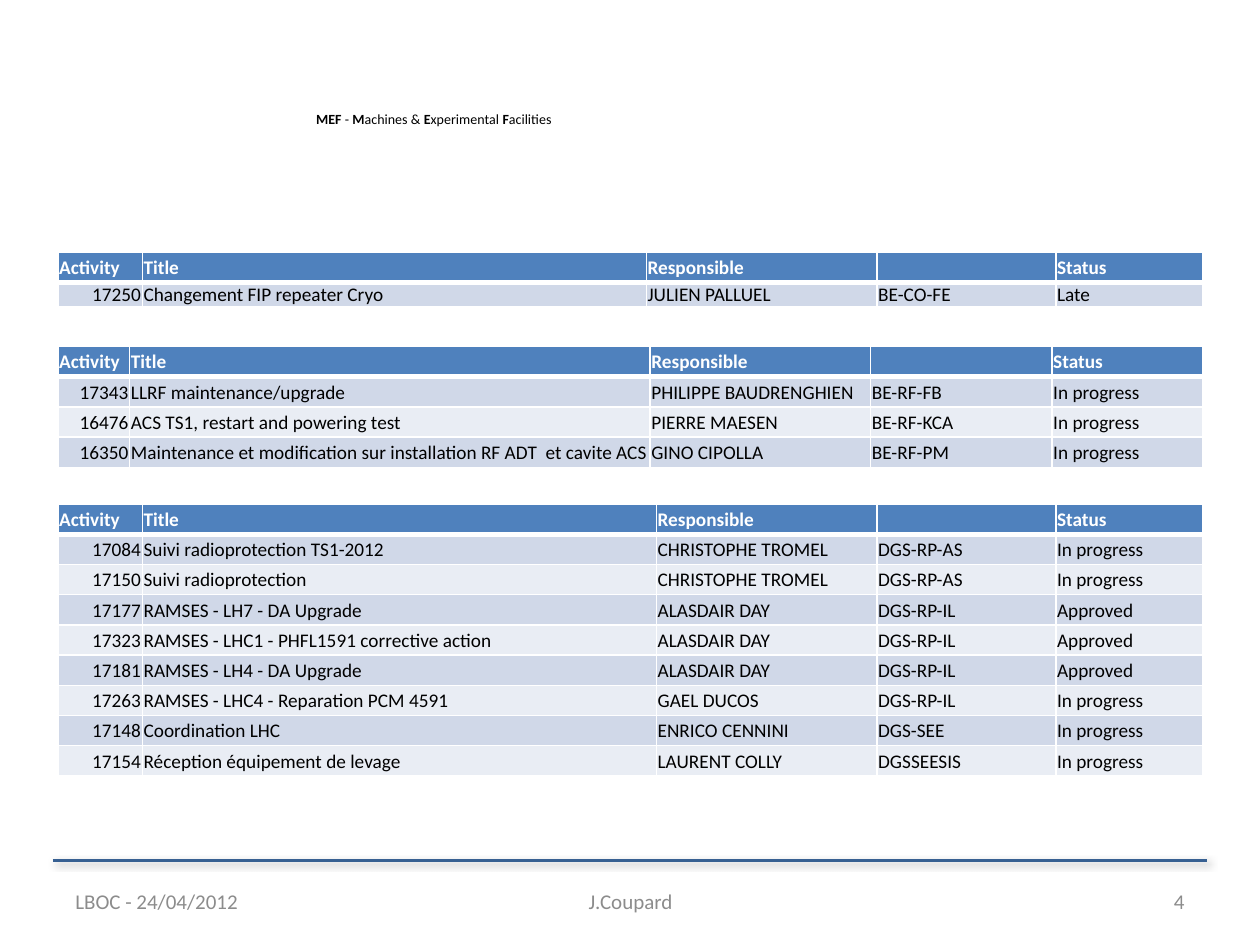
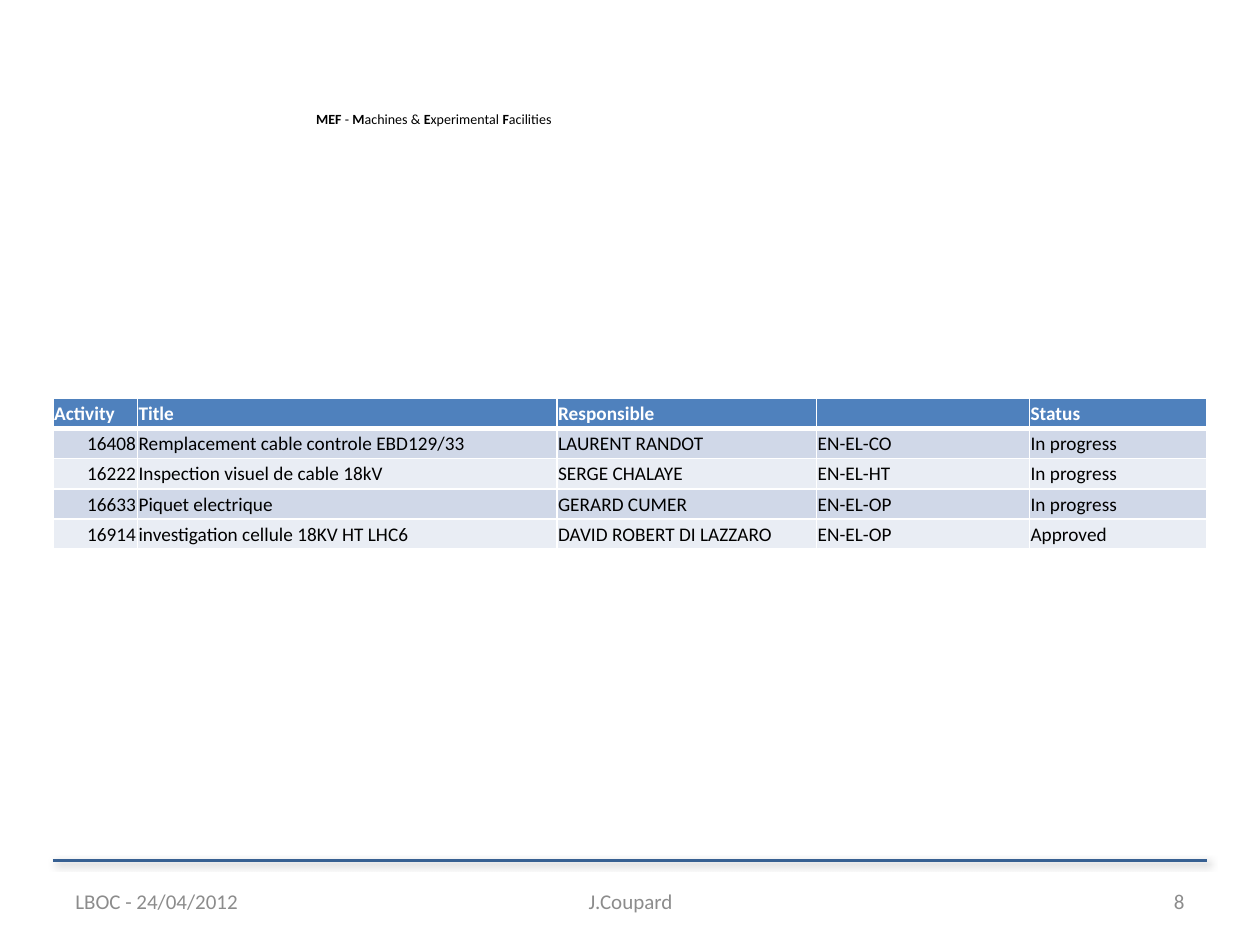
"""Build two slides of activity tables with a shared header and footer."""
import pptx
import pptx.util
import pptx.dml.color
import pptx.enum.shapes
import pptx.enum.text
import pptx.oxml
import pptx.oxml.ns
from lxml import etree

COLORS = {"head": "4F81BD", "odd": "D0D8E8", "even": "E9EDF4", "rule": "376092",
          "foot": "8C8C8C", "ink": "000000", "white": "FFFFFF"}
FONT = "Calibri"
HEADS = ("Activity", "Title", "Responsible", "", "Status")
BANNER = (("MEF ", True), ("- ", False), ("M", True), ("achines & ", False),
          ("E", True), ("xperimental ", False), ("F", True), ("acilities", False))
ROW = 0.24

SLIDES = [
    {"page": "4", "tables": [
        {"at": (0.46, 2), "cols": (0.67, 4, 1.83, 1.42, 1.17), "row": 0.17, "rows": [
            ("17250", "Changement FIP repeater Cryo", "JULIEN PALLUEL", "BE-CO-FE", "Late"),
        ]},
        {"at": (0.46, 2.75), "cols": (0.57, 4.13, 1.75, 1.44, 1.2), "row": ROW, "rows": [
            ("17343", "LLRF maintenance/upgrade", "PHILIPPE BAUDRENGHIEN", "BE-RF-FB", "In progress"),
            ("16476", "ACS TS1, restart and powering test", "PIERRE MAESEN", "BE-RF-KCA", "In progress"),
            ("16350", "Maintenance et modification sur installation RF ADT  et cavite ACS",
             "GINO CIPOLLA", "BE-RF-PM", "In progress"),
        ]},
        {"at": (0.46, 4), "cols": (0.67, 4.08, 1.75, 1.42, 1.17), "row": ROW, "rows": [
            ("17084", "Suivi radioprotection TS1-2012", "CHRISTOPHE TROMEL", "DGS-RP-AS", "In progress"),
            ("17150", "Suivi radioprotection", "CHRISTOPHE TROMEL", "DGS-RP-AS", "In progress"),
            ("17177", "RAMSES - LH7 - DA Upgrade", "ALASDAIR DAY", "DGS-RP-IL", "Approved"),
            ("17323", "RAMSES - LHC1 - PHFL1591 corrective action", "ALASDAIR DAY", "DGS-RP-IL", "Approved"),
            ("17181", "RAMSES - LH4 - DA Upgrade", "ALASDAIR DAY", "DGS-RP-IL", "Approved"),
            ("17263", "RAMSES - LHC4 - Reparation PCM 4591", "GAEL DUCOS", "DGS-RP-IL", "In progress"),
            ("17148", "Coordination LHC", "ENRICO CENNINI", "DGS-SEE", "In progress"),
            ("17154", "Réception équipement de levage", "LAURENT COLLY", "DGSSEESIS", "In progress"),
        ]},
    ]},
    {"page": "8", "tables": [
        {"at": (0.42, 3.16), "cols": (0.67, 3.33, 2.06, 1.69, 1.41), "row": ROW, "rows": [
            ("16408", "Remplacement cable controle EBD129/33", "LAURENT RANDOT", "EN-EL-CO", "In progress"),
            ("16222", "Inspection visuel de cable 18kV", "SERGE CHALAYE", "EN-EL-HT", "In progress"),
            ("16633", "Piquet electrique", "GERARD CUMER", "EN-EL-OP", "In progress"),
            ("16914", "investigation cellule 18KV HT LHC6", "DAVID ROBERT DI LAZZARO", "EN-EL-OP", "Approved"),
        ]},
    ]},
]

Inches = pptx.util.Inches
Pt = pptx.util.Pt
ALIGN = pptx.enum.text.PP_ALIGN
MIDDLE = pptx.enum.text.MSO_ANCHOR.MIDDLE


def color(name):
    return pptx.dml.color.RGBColor.from_string(COLORS[name])


def add_run(para, text, size, ink, bold=False):
    run = para.add_run()
    run.text = text
    run.font.name = FONT
    run.font.size = Pt(size)
    run.font.bold = bold
    run.font.color.rgb = color(ink)


def add_text(slide, box, runs, size, ink, align=ALIGN.LEFT, wrap=True):
    frame = slide.shapes.add_textbox(*map(Inches, box)).text_frame
    frame.word_wrap = wrap
    if wrap:
        frame.vertical_anchor = MIDDLE
    para = frame.paragraphs[0]
    para.alignment = align
    for text, bold in runs:
        add_run(para, text, size, ink, bold)


def add_rule(slide):
    line = slide.shapes.add_connector(
        pptx.enum.shapes.MSO_CONNECTOR.STRAIGHT, *map(Inches, (0.42, 6.83, 9.58, 6.83)))
    line.line.color.rgb = color("rule")
    line.line.width = Pt(1.5)
    line._element.spPr.append(pptx.oxml.parse_xml(
        f'<a:effectLst {pptx.oxml.ns.nsdecls("a")}>'
        f'<a:outerShdw blurRad="{Pt(4)}" dist="{Pt(2)}" dir="2700000" rotWithShape="0">'
        f'<a:srgbClr val="{COLORS["ink"]}"><a:alpha val="40000"/></a:srgbClr>'
        '</a:outerShdw></a:effectLst>'))


def add_frame(slide, page):
    add_rule(slide)
    add_text(slide, (2.41, 0.83, 2.09, 0.24), BANNER, 8, "ink", wrap=False)
    feet = (("LBOC - 24/04/2012", 0.5, 2.33, ALIGN.LEFT),
            ("J.Coupard", 3.42, 3.17, ALIGN.CENTER), (page, 7.17, 2.33, ALIGN.RIGHT))
    for text, left, width, align in feet:
        add_text(slide, (left, 6.95, width, 0.4), [(text, False)], 12, "foot", align)


def set_edges(cell, row):
    widths = {"lnL": 1, "lnR": 1, "lnT": 3 if row == 1 else 1, "lnB": 3 if row == 0 else 1}
    for tag, width in widths.items():
        cell._tc.get_or_add_tcPr().append(pptx.oxml.parse_xml(
            f'<a:{tag} {pptx.oxml.ns.nsdecls("a")} w="{Pt(width)}"><a:solidFill>'
            f'<a:srgbClr val="{COLORS["white"]}"/></a:solidFill></a:{tag}>'))


def fill_cell(cell, text, row, col):
    set_edges(cell, row)
    cell.fill.solid()
    cell.fill.fore_color.rgb = color("head" if row == 0 else "odd" if row % 2 else "even")
    cell.margin_left = cell.margin_right = cell.margin_top = Inches(0.01)
    cell.margin_bottom = 0
    cell.vertical_anchor = MIDDLE
    para = cell.text_frame.paragraphs[0]
    if text:
        para.alignment = ALIGN.RIGHT if row and col == 0 else ALIGN.LEFT
        add_run(para, text, 11, "ink" if row else "white", row == 0)
    else:
        etree.SubElement(para._p, pptx.oxml.ns.qn("a:endParaRPr"), sz="1100")


def add_grid(slide, spec):
    rows = [HEADS] + spec["rows"]
    highs = [ROW] + [spec["row"]] * len(spec["rows"])
    box = (*spec["at"], sum(spec["cols"]), sum(highs))
    grid = slide.shapes.add_table(len(rows), len(HEADS), *map(Inches, box)).table
    grid.horz_banding = False
    for col, width in zip(grid.columns, spec["cols"]):
        col.width = Inches(width)
    for row, high in zip(grid.rows, highs):
        row.height = Inches(high)
    for r, texts in enumerate(rows):
        for c, text in enumerate(texts):
            fill_cell(grid.cell(r, c), text, r, c)


def main():
    deck = pptx.Presentation()
    deck.slide_width, deck.slide_height = Inches(10), Inches(7.5)
    for page in SLIDES:
        slide = deck.slides.add_slide(deck.slide_layouts[6])
        add_frame(slide, page["page"])
        for spec in page["tables"]:
            add_grid(slide, spec)
    deck.save("out.pptx")


if __name__ == "__main__":
    main()
